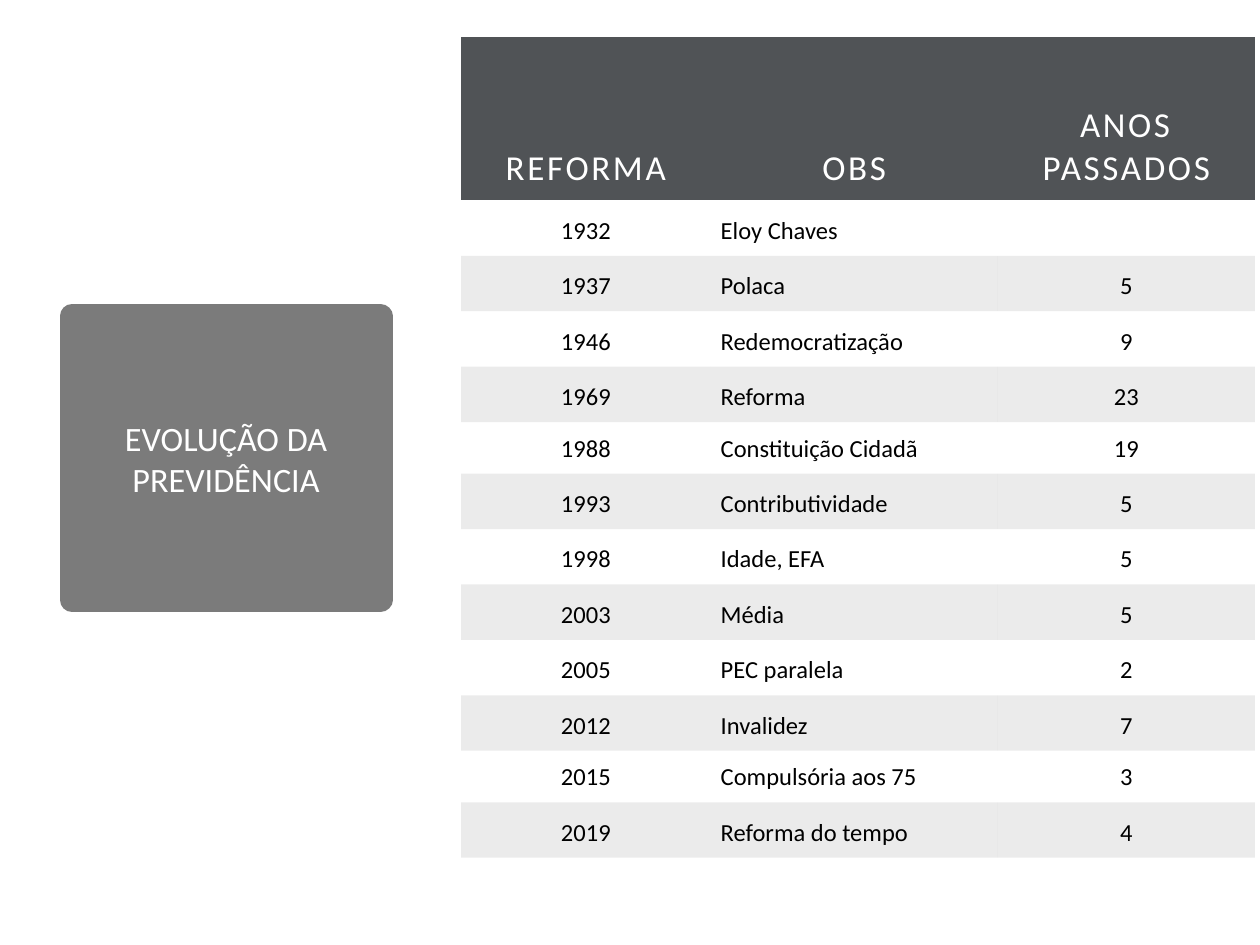
from lxml.etree import SubElement
from pptx import Presentation
from pptx.dml.color import RGBColor
from pptx.enum.text import MSO_ANCHOR, MSO_AUTO_SIZE, PP_ALIGN
from pptx.oxml.ns import qn
from pptx.util import Inches, Pt

COLORS = {"title": "7B7B7B", "header": "505356", "band": "000000",
          "text": "000000", "light": "FFFFFF"}
NO_STYLE = "{2D5ABB26-0587-4C30-8999-92F81FD0307C}"

HEADERS = ["REFORMA", "OBS", "ANOS PASSADOS"]
REFORMS = [
    ("1932", "Eloy Chaves", ""),
    ("1937", "Polaca", "5"),
    ("1946", "Redemocratização", "9"),
    ("1969", "Reforma", "23"),
    ("1988", "Constituição Cidadã", "19"),
    ("1993", "Contributividade", "5"),
    ("1998", "Idade, EFA", "5"),
    ("2003", "Média", "5"),
    ("2005", "PEC paralela", "2"),
    ("2012", "Invalidez", "7"),
    ("2015", "Compulsória aos 75", "3"),
    ("2019", "Reforma do tempo", "4"),
]
COL_WIDTHS = [1.98, 2.28, 2.04]
HEADER_HEIGHT, ROW_HEIGHT, SHORT_HEIGHT = 1.3, 0.44, 0.41
SHORT_ROWS = {"1988", "2015"}


def write(tf, text, size, color, align=PP_ALIGN.CENTER, spacing=0, font="Calibri"):
    p = tf.paragraphs[0]
    p.alignment = align
    r = p.add_run()
    r.text = text
    r.font.name = font
    r.font.size = Pt(size)
    r.font.color.rgb = RGBColor.from_string(COLORS[color])
    if spacing:
        r.font._element.set("spc", str(int(spacing * 100)))


class SlideBuilder:
    def __init__(self, prs):
        self.s = prs.slides.add_slide(prs.slide_layouts[5])

    def fill(self, target, color, alpha=None):
        target.fill.solid()
        target.fill.fore_color.rgb = RGBColor.from_string(COLORS[color])
        if alpha is not None:
            rgb = target._tc.tcPr.find(".//" + qn("a:srgbClr"))
            SubElement(rgb, qn("a:alpha"), val=str(alpha * 1000))

    def title(self, text, left, top, width, height):
        sp = self.s.shapes.title
        sp.left, sp.top = Inches(left), Inches(top)
        sp.width, sp.height = Inches(width), Inches(height)
        self.fill(sp, "title")
        # The wide line with round joins gives the box its soft corners
        self.fill(sp.line, "title")
        sp.line.width = Pt(13.75)
        SubElement(sp.line._ln, qn("a:round"))
        tf = sp.text_frame
        tf.word_wrap = True
        tf.auto_size = MSO_AUTO_SIZE.NONE
        tf.vertical_anchor = MSO_ANCHOR.MIDDLE
        write(tf, text, 19.5, "light")

    def cell(self, cell, text, **fmt):
        if not text:
            return
        cell.vertical_anchor = MSO_ANCHOR.BOTTOM
        cell.margin_left = cell.margin_right = Inches(0.08)
        cell.margin_top = cell.margin_bottom = Inches(0.08)
        write(cell.text_frame, text, **fmt)

    def table(self, left, top, headers, rows, widths, heights):
        frame = self.s.shapes.add_table(
            len(heights), len(widths), Inches(left), Inches(top),
            Inches(sum(widths)), Inches(sum(heights)))
        table = frame.table
        table.horz_banding = False
        table._tbl.tblPr.find(qn("a:tableStyleId")).text = NO_STYLE
        for column, width in zip(table.columns, widths):
            column.width = Inches(width)
        for row, height in zip(table.rows, heights):
            row.height = Inches(height)

        # Header row
        for c, text in enumerate(headers):
            cell = table.cell(0, c)
            self.fill(cell, "header")
            self.cell(cell, text, size=20, color="light", spacing=1.5)

        # Body rows, every second one shaded
        for i, values in enumerate(rows, start=1):
            for c, text in enumerate(values):
                cell = table.cell(i, c)
                if i % 2 == 0:
                    self.fill(cell, "band", alpha=8)
                else:
                    cell.fill.background()
                align = PP_ALIGN.LEFT if c == 1 else PP_ALIGN.CENTER
                self.cell(cell, text, size=14, color="text", align=align)


def main():
    prs = Presentation()
    prs.slide_width, prs.slide_height = Inches(10), Inches(7.5)
    slide = SlideBuilder(prs)
    slide.title("EVOLUÇÃO DA PREVIDÊNCIA", 0.57, 2.51, 2.45, 2.25)
    heights = [HEADER_HEIGHT] + [
        SHORT_HEIGHT if year in SHORT_ROWS else ROW_HEIGHT for year, *_ in REFORMS]
    slide.table(3.66, 0.29, HEADERS, REFORMS, COL_WIDTHS, heights)
    prs.save("out.pptx")


if __name__ == "__main__":
    main()
